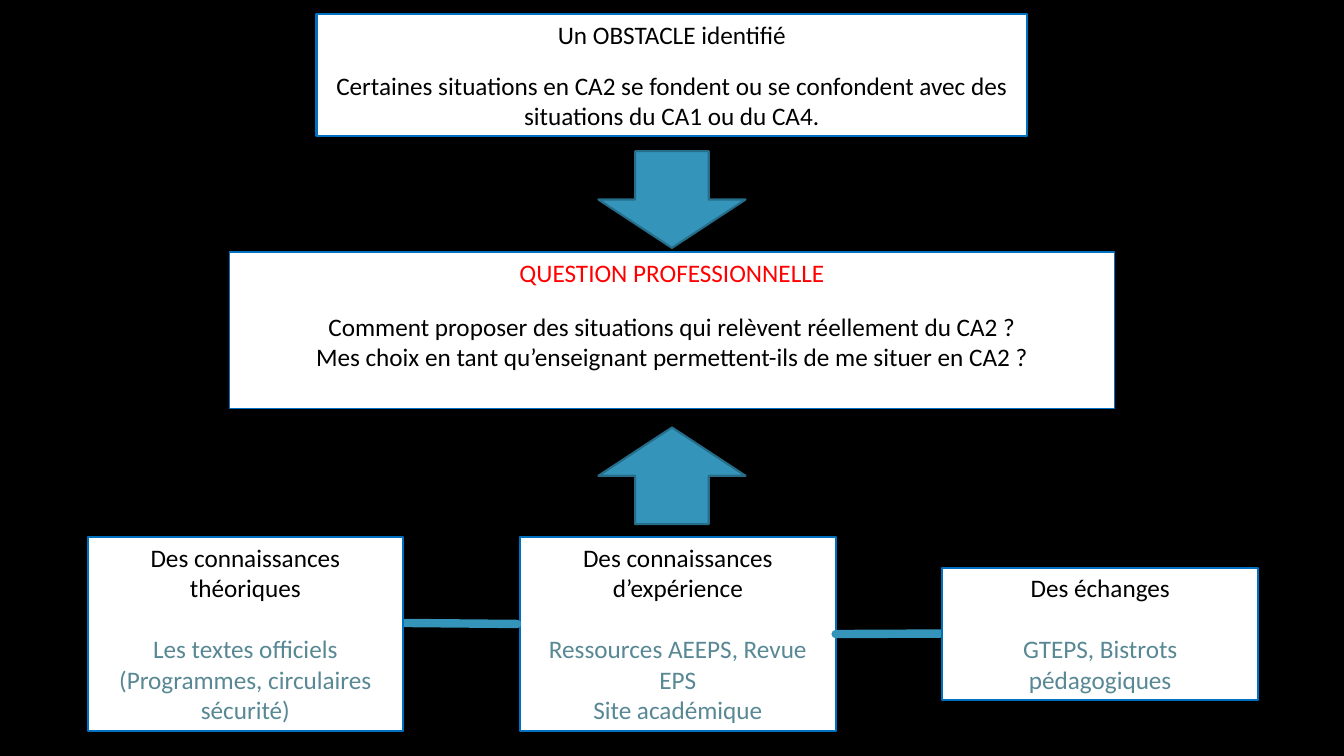
"""Builds a slide leading from an obstacle and three sources to a professional question."""
from dataclasses import dataclass

from lxml import etree
from pptx import Presentation
from pptx import util as u
from pptx.dml.color import RGBColor
from pptx.enum import shapes, text
from pptx.oxml.ns import qn


@dataclass(frozen=True)
class Theme:
    back: str = "000000"
    paper: str = "FFFFFF"
    ink: str = "000000"
    alert: str = "FF0000"
    muted: str = "588894"
    border: str = "0070C0"
    accent: str = "3494BA"
    accent_edge: str = "266D8A"
    font: str = "Calibri"
    size: float = 18


@dataclass(frozen=True)
class Box:
    left: float
    top: float
    width: float
    height: float
    heading: str
    body: tuple[str, ...]
    gap: float = 22
    heading_color: str = Theme.ink
    body_color: str = Theme.muted
    border: float = 1.5


@dataclass(frozen=True)
class Arrow:
    top: float
    rotation: float


@dataclass(frozen=True)
class Link:
    x1: float
    y1: float
    x2: float
    y2: float


T = Theme()
WIDTH, HEIGHT = 960, 540
ARROW_W, ARROW_H = 105.1, 69.1
SOURCE_W, SOURCE_H, SOURCE_TOP = 225.4, 138.2, 383.8
FRAME = dict(word_wrap=True, auto_size=text.MSO_AUTO_SIZE.NONE,
             vertical_anchor=text.MSO_ANCHOR.TOP,
             margin_left=u.Pt(7.2), margin_right=u.Pt(7.2),
             margin_top=u.Pt(3.6), margin_bottom=u.Pt(3.6))
FONT = dict(name=T.font, size=u.Pt(T.size), bold=False)

OBSTACLE = Box(226.1, 10.1, 507.6, 87.1, "Un OBSTACLE identifié",
               ("Certaines situations en CA2 se fondent ou se confondent avec des "
                "situations du CA1 ou du CA4.",), gap=14.6, body_color=T.ink)
QUESTION = Box(163.9, 180, 632.2, 111.6, "QUESTION PROFESSIONNELLE",
               ("Comment proposer des situations qui relèvent réellement du CA2 ?",
                "Mes choix en tant qu’enseignant permettent-ils de me situer en CA2 ?"),
               gap=17, heading_color=T.alert, body_color=T.ink, border=0.75)
THEORY = Box(62.6, SOURCE_TOP, SOURCE_W, SOURCE_H, "Des connaissances théoriques",
             ("Les textes officiels (Programmes, circulaires sécurité)",))
EXPERIENCE = Box(371.5, SOURCE_TOP, SOURCE_W, SOURCE_H, "Des connaissances d’expérience",
                 ("Ressources AEEPS, Revue EPS", "Site académique"))
EXCHANGES = Box(673.2, 405.4, SOURCE_W, 94.3, "Des échanges",
                ("GTEPS, Bistrots pédagogiques",))
ARROWS = (Arrow(108, 0), Arrow(305.3, 180))
THEORY_LINK = Link(289.4, 445, 369.4, 445.7)
EXCHANGES_LINK = Link(596.9, 452.9, 673.2, 452.6)


def apply(obj, values: dict) -> None:
    """Set each named attribute on the object."""
    for name, value in values.items():
        setattr(obj, name, value)


def paint(sp, fill: str, line: str, width: float) -> None:
    """Give a shape its fill and outline."""
    sp.fill.solid()
    sp.fill.fore_color.rgb = RGBColor.from_string(fill)
    sp.line.color.rgb = RGBColor.from_string(line)
    sp.line.width = u.Pt(width)


def fill_box(sp, box: Box) -> None:
    """Place, paint and write a text box."""
    apply(sp, {k: u.Pt(getattr(box, k)) for k in ("left", "top", "width", "height")})
    paint(sp, T.paper, T.border, box.border)
    tf = sp.text_frame
    apply(tf, FRAME)
    for i, line in enumerate((box.heading, *box.body)):
        p = tf.add_paragraph() if i else tf.paragraphs[0]
        apply(p, dict(alignment=text.PP_ALIGN.CENTER,
                      space_before=u.Pt(box.gap if i == 1 else 0)))
        r = p.add_run()
        r.text = line
        apply(r.font, FONT)
        r.font.color.rgb = RGBColor.from_string(box.body_color if i else box.heading_color)


def add_box(s, box: Box):
    """Add a rectangle holding a heading and its details."""
    sp = s.shapes.add_shape(shapes.MSO_SHAPE.RECTANGLE, 0, 0, 0, 0)
    sp.shadow.inherit = False
    fill_box(sp, box)
    return sp


def add_arrow(s, arrow: Arrow) -> None:
    """Add a centred block arrow pointing at the question."""
    sp = s.shapes.add_shape(shapes.MSO_SHAPE.DOWN_ARROW, u.Pt((WIDTH - ARROW_W) / 2),
                            u.Pt(arrow.top), u.Pt(ARROW_W), u.Pt(ARROW_H))
    sp.shadow.inherit = False
    sp.rotation = arrow.rotation
    paint(sp, T.accent, T.accent_edge, 1.5)


def add_link(s, link: Link):
    """Add a thick round-ended line between two sources."""
    c = s.shapes.add_connector(shapes.MSO_CONNECTOR.STRAIGHT, u.Pt(link.x1), u.Pt(link.y1),
                               u.Pt(link.x2), u.Pt(link.y2))
    c.line.color.rgb = RGBColor.from_string(T.accent)
    c.line.width = u.Pt(6)
    c.line._get_or_add_ln().set("cap", "rnd")
    etree.SubElement(c._element.spPr, qn("a:effectLst"))
    return c


def main() -> None:
    """Build and save the slide."""
    prs = Presentation()
    apply(prs, dict(slide_width=u.Pt(WIDTH), slide_height=u.Pt(HEIGHT)))
    s = prs.slides.add_slide(prs.slide_layouts[5])
    s.background.fill.solid()
    s.background.fill.fore_color.rgb = RGBColor.from_string(T.back)

    fill_box(s.shapes.title, OBSTACLE)
    experience = add_box(s, EXPERIENCE)
    for arrow in ARROWS:
        add_arrow(s, arrow)
    add_link(s, THEORY_LINK)
    link = add_link(s, EXCHANGES_LINK)
    add_box(s, QUESTION)
    add_box(s, THEORY)
    exchanges = add_box(s, EXCHANGES)
    link.begin_connect(experience, 3)
    link.end_connect(exchanges, 1)
    prs.save("out.pptx")


if __name__ == "__main__":
    main()
